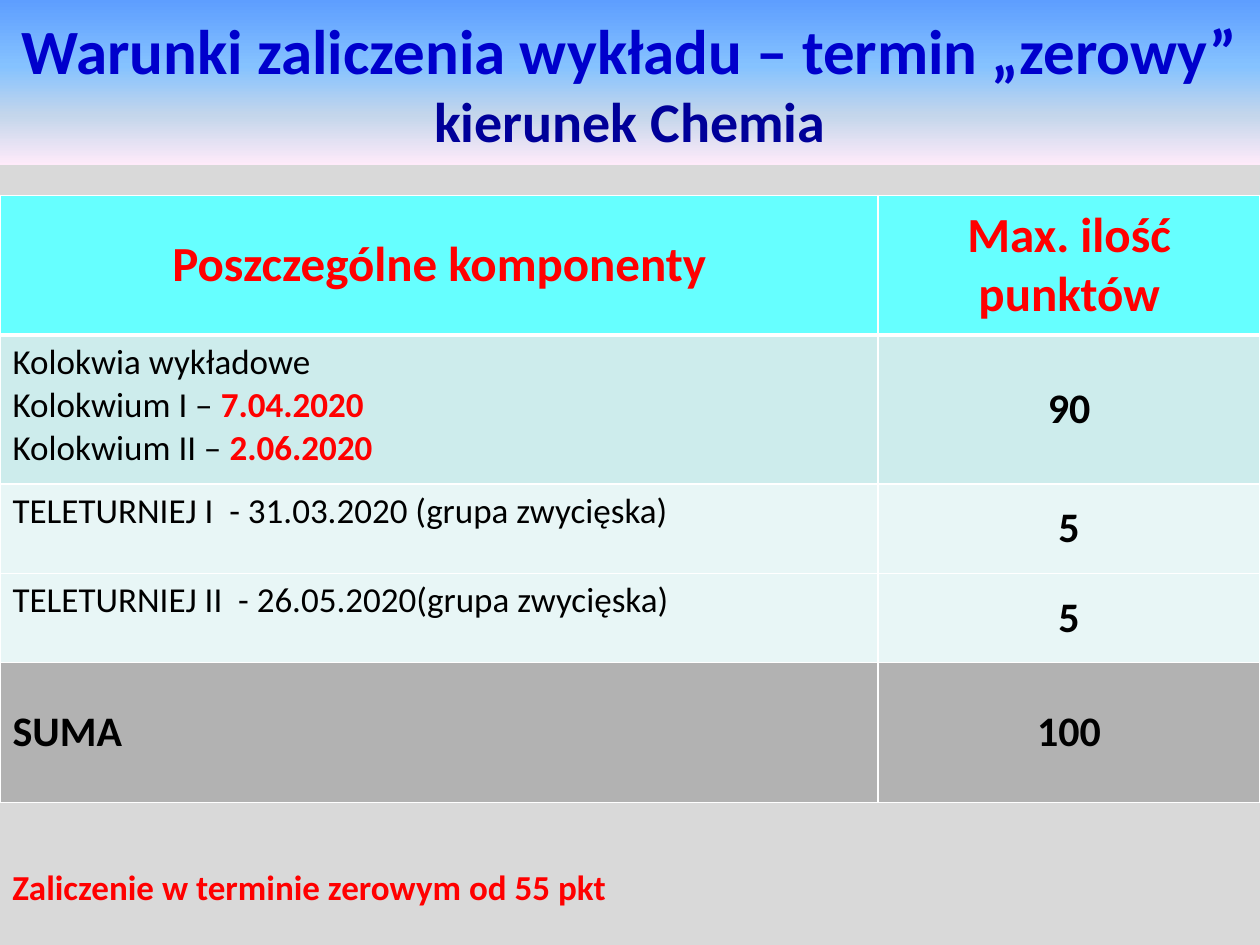
from copy import deepcopy
from dataclasses import dataclass

from lxml import etree
from pptx import Presentation
from pptx.dml.color import RGBColor
from pptx.enum.text import MSO_ANCHOR, MSO_AUTO_SIZE, PP_ALIGN
from pptx.oxml.ns import qn
from pptx.util import Inches, Pt

CENTER, LEFT = PP_ALIGN.CENTER, PP_ALIGN.LEFT
MIDDLE, TOP = MSO_ANCHOR.MIDDLE, MSO_ANCHOR.TOP
TITLE_ONLY = 5


@dataclass(frozen=True)
class Theme:
    """Colours, font and type sizes of the slide."""
    font: str = "Calibri"
    background: str = "D9D9D9"
    title: str = "0000CC"
    subtitle: str = "000099"
    accent: str = "FF0000"
    text: str = "000000"
    border: str = "FFFFFF"
    header_fill: str = "66FFFF"
    test_fill: str = "CDECEC"
    quiz_fill: str = "E8F6F6"
    total_fill: str = "B2B2B2"
    banner: tuple = ((0, "5E9EFF"), (40, "85C2FF"), (70, "C4D6EB"), (100, "FFEBFA"))
    title_size: int = 36
    subtitle_size: int = 32
    header_size: int = 28
    points_size: int = 24
    body_size: int = 20


THEME = Theme()


def plain(text):
    """Describe a regular body run."""
    return text, THEME.body_size, THEME.text, False


def strong(text, size=THEME.points_size, color=THEME.text):
    """Describe a bold run."""
    return text, size, color, True


def alert(text, size=THEME.body_size):
    """Describe a bold run in the accent colour."""
    return strong(text, size, THEME.accent)


def write(frame, paragraphs, align=LEFT):
    """Fill a text frame with paragraphs given as lists of runs."""
    for index, runs in enumerate(paragraphs):
        paragraph = frame.add_paragraph() if index else frame.paragraphs[0]
        paragraph.alignment = align
        for text, size, color, bold in runs:
            run = paragraph.add_run()
            run.text = text
            run.font.name = THEME.font
            run.font.size = Pt(size)
            run.font.bold = bold
            run.font.color.rgb = RGBColor.from_string(color)


def fill_banner(shape):
    """Give a shape the vertical banner gradient."""
    shape.fill.gradient()
    shape.fill.gradient_angle = 270
    stops = shape.element.spPr.find(".//" + qn("a:gsLst"))
    pattern = deepcopy(stops[0])
    for stop in list(stops):
        stops.remove(stop)
    for _ in THEME.banner:
        stops.append(deepcopy(pattern))
    for stop, (percent, color) in zip(shape.fill.gradient_stops, THEME.banner):
        stop.position = percent / 100
        stop.color.rgb = RGBColor.from_string(color)


def add_title(slide):
    """Place the two-line title on its banner."""
    title = slide.shapes.title
    title.left, title.top = Inches(0), Inches(0)
    title.width, title.height = Inches(10), Inches(1.31)
    fill_banner(title)
    frame = title.text_frame
    frame.auto_size = MSO_AUTO_SIZE.NONE
    frame.vertical_anchor = MIDDLE
    write(frame, [
        [strong("Warunki zaliczenia wykładu – termin „zerowy”", THEME.title_size, THEME.title)],
        [strong("kierunek Chemia", THEME.subtitle_size, THEME.subtitle)],
    ], CENTER)


def set_borders(cell, top=1, bottom=1):
    """Draw the four cell borders, with widths in points."""
    properties = cell._tc.get_or_add_tcPr()
    sides = (("a:lnL", 1), ("a:lnR", 1), ("a:lnT", top), ("a:lnB", bottom))
    for position, (tag, width) in enumerate(sides):
        line = etree.Element(qn(tag), w=str(Pt(width)))
        solid = etree.SubElement(line, qn("a:solidFill"))
        etree.SubElement(solid, qn("a:srgbClr"), val=THEME.border)
        properties.insert(position, line)


def add_points_table(slide, rows):
    """Add the table of components and their maximum points."""
    widths, heights = (6.97, 3.03), (1.11, 1.18, 0.71, 0.71, 1.11)
    table = slide.shapes.add_table(
        len(rows), len(widths), Inches(0), Inches(1.55),
        Inches(sum(widths)), Inches(sum(heights))).table
    for column, width in zip(table.columns, widths):
        column.width = Inches(width)
    for index, (fill, align, anchor, component, points) in enumerate(rows):
        table.rows[index].height = Inches(heights[index])
        contents = ((component, align, anchor), ([[points]], CENTER, MIDDLE))
        for cell, (paragraphs, cell_align, cell_anchor) in zip(table.rows[index].cells, contents):
            cell.fill.solid()
            cell.fill.fore_color.rgb = RGBColor.from_string(fill)
            cell.vertical_anchor = cell_anchor
            set_borders(cell, 3 if index == 1 else 1, 3 if index == 0 else 1)
            write(cell.text_frame, paragraphs, cell_align)


def add_note(slide, text):
    """Add the passing threshold below the table."""
    note = slide.shapes.add_textbox(Inches(0), Inches(6.82), Inches(9.65), Inches(0.44))
    note.text_frame.word_wrap = True
    note.text_frame.auto_size = MSO_AUTO_SIZE.SHAPE_TO_FIT_TEXT
    write(note.text_frame, [[alert(text)]])


def main():
    """Build and save the slide."""
    deck = Presentation()
    deck.slide_width, deck.slide_height = Inches(10), Inches(7.5)
    slide = deck.slides.add_slide(deck.slide_layouts[TITLE_ONLY])
    slide.background.fill.solid()
    slide.background.fill.fore_color.rgb = RGBColor.from_string(THEME.background)
    add_title(slide)
    add_points_table(slide, [
        (THEME.header_fill, CENTER, MIDDLE,
         [[alert("Poszczególne komponenty", THEME.header_size)]],
         alert("Max. ilość punktów", THEME.header_size)),
        (THEME.test_fill, LEFT, TOP,
         [[plain("Kolokwia wykładowe")],
          [plain("Kolokwium I – "), alert("7.04.2020")],
          [plain("Kolokwium II – "), alert("2.06.2020")]],
         strong("90")),
        (THEME.quiz_fill, LEFT, TOP,
         [[plain("TELETURNIEJ I  - 31.03.2020 (grupa zwycięska)")]], strong("5")),
        (THEME.quiz_fill, LEFT, TOP,
         [[plain("TELETURNIEJ II  - 26.05.2020(grupa zwycięska)")]], strong("5")),
        (THEME.total_fill, LEFT, MIDDLE, [[strong("SUMA")]], strong("100")),
    ])
    add_note(slide, "Zaliczenie w terminie zerowym od 55 pkt")
    deck.save("out.pptx")


if __name__ == "__main__":
    main()
